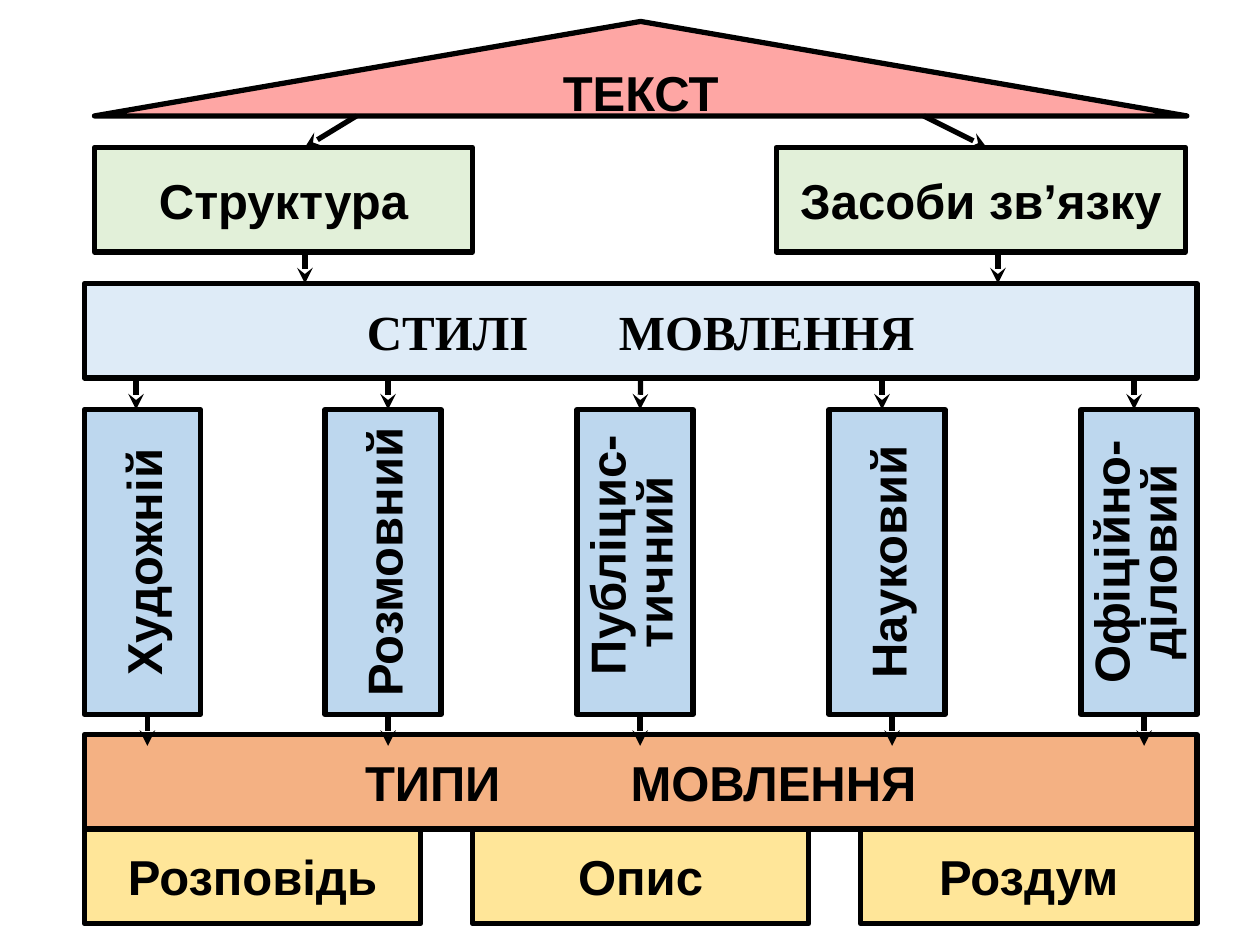
from dataclasses import dataclass

from lxml import etree
from pptx import Presentation
from pptx.dml.color import RGBColor
from pptx.enum.shapes import MSO_CONNECTOR, MSO_SHAPE
from pptx.enum.text import MSO_ANCHOR, PP_ALIGN
from pptx.oxml.ns import qn
from pptx.slide import Slide
from pptx.util import Inches, Pt

ROOF = MSO_SHAPE.FLOWCHART_EXTRACT
RECTANGLE = MSO_SHAPE.RECTANGLE
STRAIGHT = MSO_CONNECTOR.STRAIGHT
MIDDLE = MSO_ANCHOR.MIDDLE
CENTER = PP_ALIGN.CENTER
BOTTOM_SIDE = 2


def color(value):
    return RGBColor.from_string(value)


def apply(target, values):
    for name, value in values.items():
        setattr(target, name, value)


@dataclass
class Diagram:
    page: Slide
    ink: str = "000000"
    font: str = "Arial"
    size: float = 28
    stroke: float = 3

    def outline(self, line):
        line.color.rgb = color(self.ink)
        line.width = Pt(self.stroke)

    def box(self, place, fill, lines, kind=RECTANGLE, font=None, rotation=0, spacing=None):
        box = self.page.shapes.add_shape(kind, *map(Inches, place))
        box.rotation = rotation
        box.shadow.inherit = False
        box.fill.solid()
        box.fill.fore_color.rgb = color(fill)
        self.outline(box.line)
        frame = box.text_frame
        apply(frame, {"word_wrap": False, "vertical_anchor": MIDDLE})
        for index, line in enumerate(lines):
            para = frame.add_paragraph() if index else frame.paragraphs[0]
            apply(para, {"alignment": CENTER, "line_spacing": spacing})
            span = para.add_run()
            span.text = line
            apply(span.font, {"name": font or self.font, "size": Pt(self.size), "bold": True})
            span.font.color.rgb = color(self.ink)
        return box

    def arrow(self, start, end, source=None):
        arrow = self.page.shapes.add_connector(STRAIGHT, *map(Inches, start + end))
        if source is not None:
            arrow.begin_connect(source, BOTTOM_SIDE)
        self.outline(arrow.line)
        etree.SubElement(arrow.line._get_or_add_ln(), qn("a:tailEnd"), type="stealth")
        etree.SubElement(arrow._element.spPr, qn("a:effectLst"))


def main():
    deck = Presentation()
    apply(deck, {"slide_width": Inches(10), "slide_height": Inches(7.5)})
    diagram = Diagram(deck.slides.add_slide(deck.slide_layouts[6]))

    diagram.box((0.75, 0.17, 8.67, 0.75), "FEA6A4", ["ТЕКСТ"], kind=ROOF)
    for left, width, label in ((0.75, 3, "Структура"), (6.16, 3.25, "Засоби зв’язку")):
        diagram.box((left, 1.17, width, 0.83), "E2F0D9", [label])

    styles_bar = diagram.box((0.67, 2.25, 8.83, 0.75), "DEEBF7",
                             ["СТИЛІ \t\tМОВЛЕННЯ"], font="Times New Roman")
    diagram.box((0.67, 5.83, 8.83, 0.75), "F4B183", ["ТИПИ\t\t МОВЛЕННЯ"])

    styles = (
        (-0.08, ["Художній"]),
        (1.83, ["Розмовний"]),
        (3.83, [" Публіцис-", "тичний"]),
        (5.83, ["Науковий"]),
        (7.83, ["Офіційно-", "діловий"]),
    )
    for left, lines in styles:
        spacing = 0.8 if len(lines) > 1 else None
        diagram.box((left, 4, 2.42, 0.92), "BDD7EE", lines, rotation=270, spacing=spacing)

    for index, label in enumerate(("Розповідь", "Опис", "Роздум")):
        diagram.box((0.67 + 3.08 * index, 6.58, 2.67, 0.75), "FFE699", [label])

    diagram.arrow((7.33, 0.92), (7.83, 1.17))
    diagram.arrow((2.83, 0.92), (2.42, 1.17))
    arrow_rows = (
        (2, (2.42, 7.92)),
        (3, (1.08, 3.08, 5.08, 7, 9)),
        (5.67, (1.17, 3.08, 5.08, 7.08, 9.08)),
    )
    for top, columns in arrow_rows:
        for x in columns:
            source = styles_bar if (x, top) == (5.08, 3) else None
            diagram.arrow((x, top), (x, top + 0.25), source)

    deck.save("out.pptx")


if __name__ == "__main__":
    main()
